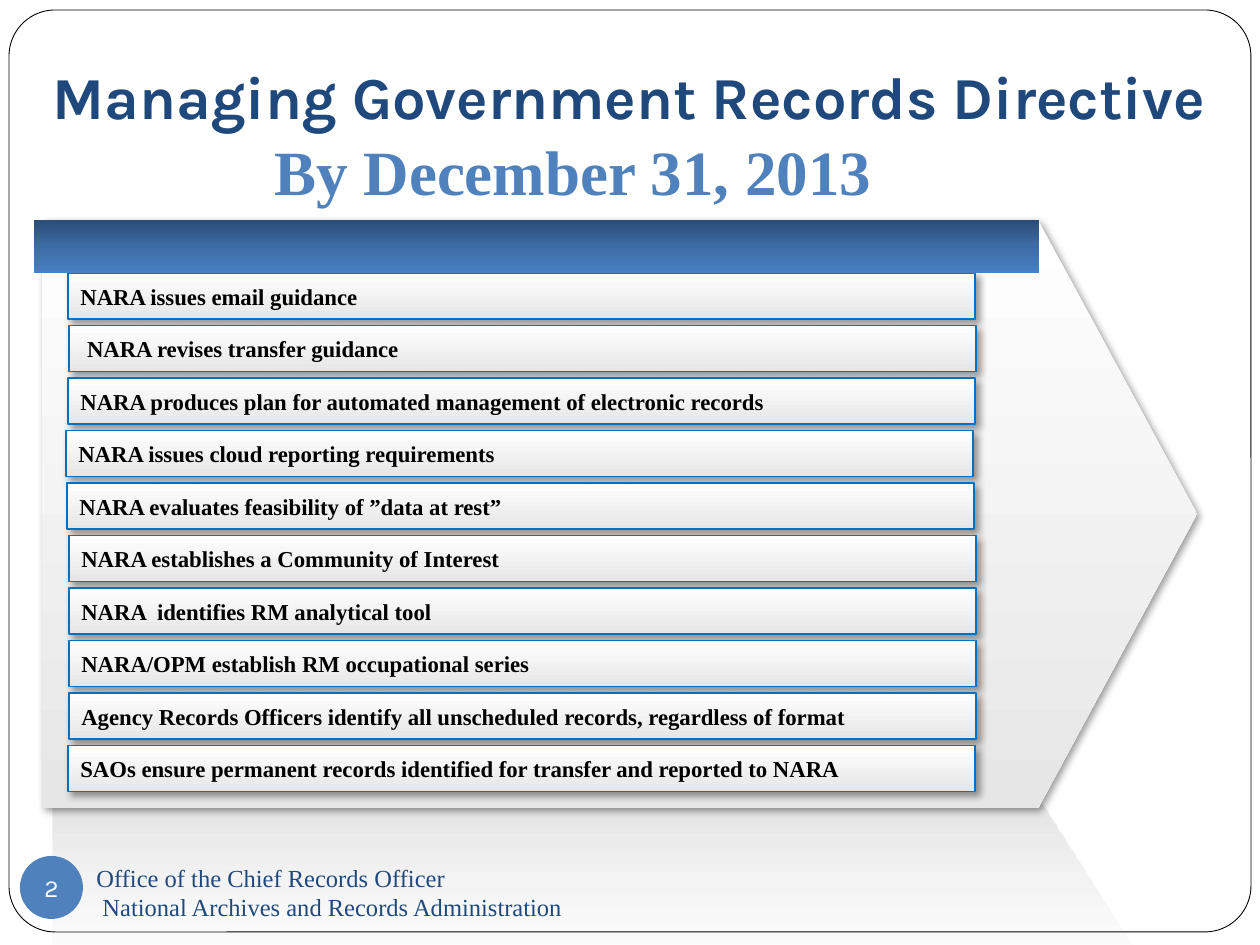
import lxml.etree
import pptx
import pptx.dml.color
import pptx.enum.shapes
import pptx.enum.text
import pptx.oxml
import pptx.oxml.ns
import pptx.util

PX = 914400 / 126
SHAPE = pptx.enum.shapes.MSO_SHAPE
ANCHOR = pptx.enum.text.MSO_ANCHOR
ALIGN = pptx.enum.text.PP_ALIGN
NAVY, BLUE, WHITE, BLACK, EDGE = "navy", "blue", "white", "black", "edge"
COLORS = {k: pptx.dml.color.RGBColor.from_string(v) for k, v in {
    NAVY: "1F497D", BLUE: "4F81BD", WHITE: "FFFFFF", BLACK: "000000", EDGE: "0070C0",
}.items()}
# Gradient stops: position, colour, opacity in percent
SILVER = [(0, "FFFFFF", 100), (100, "E6E6E6", 100)]
REFLECTION = [(0, "020000", 11), (60, "FFFFFF", 0)]
BANNER = [(0, "2A4C75", 100), (50, "3C6CA6", 100), (100, "4780C5", 100)]
SHADOW = """<a:effectLst %s><a:outerShdw blurRad="50800" dist="38100" dir="2700000"
algn="tl" rotWithShape="0"><a:srgbClr val="000000"><a:alpha val="40000"/></a:srgbClr>
</a:outerShdw></a:effectLst>""" % pptx.oxml.ns.nsdecls("a")

prs = pptx.Presentation()
prs.slide_width = pptx.util.Inches(10)
prs.slide_height = pptx.util.Inches(7.5)
slide = prs.slides.add_slide(prs.slide_layouts[5])


def add_block(kind, box, stops=None, shadow=False):
    """Add a preset shape with a vertical gradient and, if asked, a soft shadow."""
    block = slide.shapes.add_shape(kind, *[round(v * PX) for v in box])
    block.line.fill.background()
    block.shadow.inherit = False
    properties = block._element.spPr
    if stops:
        gradient = "".join(
            f'<a:gs pos="{pos * 1000}"><a:srgbClr val="{color}">'
            f'<a:alpha val="{opacity * 1000}"/></a:srgbClr></a:gs>'
            for pos, color, opacity in stops)
        properties.find(pptx.oxml.ns.qn("a:prstGeom")).addnext(pptx.oxml.parse_xml(
            f'<a:gradFill {pptx.oxml.ns.nsdecls("a")} rotWithShape="1"><a:gsLst>{gradient}'
            '</a:gsLst><a:lin ang="5400000" scaled="0"/></a:gradFill>'))
    if shadow:
        properties.replace(properties.find(pptx.oxml.ns.qn("a:effectLst")),
                           pptx.oxml.parse_xml(SHADOW))
    return block


def write(holder, lines, size, color, font="Times New Roman", bold=False,
          align=ALIGN.LEFT, anchor=ANCHOR.MIDDLE):
    """Fill a shape with one paragraph per line, all in one style."""
    frame = holder.text_frame
    frame.text = "\n".join(lines)
    frame.word_wrap = True
    frame.vertical_anchor = anchor
    for paragraph in frame.paragraphs:
        paragraph.alignment = align
        paragraph.font.size = pptx.util.Pt(size)
        paragraph.font.name = font
        paragraph.font.bold = bold
        paragraph.font.color.rgb = COLORS[color]


# Rounded page frame
page_frame = add_block(SHAPE.ROUNDED_RECTANGLE, (9, 10, 1242, 922))
page_frame.adjustments[0] = 0.05
page_frame.fill.solid()
page_frame.fill.fore_color.rgb = COLORS[WHITE]
page_frame.line.color.rgb = COLORS[BLACK]
page_frame.line.width = pptx.util.Pt(0.5)

# Large arrow and its reflection
reflection = add_block(SHAPE.PENTAGON, (53, 798, 1102, 365), REFLECTION)
reflection.adjustments[0] = 0.32
arrow = add_block(SHAPE.PENTAGON, (42, 220, 1155, 588), SILVER, shadow=True)
arrow.adjustments[0] = 0.27

# Title, brought in front of the page frame
title = slide.shapes.title
slide.shapes._spTree.append(title._element)
title.left, title.top, title.width, title.height = [
    round(v * PX) for v in (42, 54, 1174, 83)]
title.text_frame.margin_left = title.text_frame.margin_right = 0
write(title, ["Managing Government Records Directive"], 34, NAVY, "Karla", True, ALIGN.CENTER)

# Deadline
deadline = slide.shapes.add_textbox(*[round(v * PX) for v in (262, 126, 697, 174)])
write(deadline, ["By December 31, 2013"], 36, BLUE, bold=True, anchor=ANCHOR.TOP)

# Milestones: left edge and wording, from top to bottom
milestones = [
    (68, "NARA issues email guidance"),
    (69, " NARA revises transfer guidance"),
    (68, "NARA produces plan for automated management of electronic records"),
    (66, "NARA issues cloud reporting requirements"),
    (67, "NARA evaluates feasibility of ”data at rest”"),
    (69, "NARA establishes a Community of Interest"),
    (69, "NARA  identifies RM analytical tool"),
    (69, "NARA/OPM establish RM occupational series"),
    (69, "Agency Records Officers identify all unscheduled records, regardless of format"),
    (68, "SAOs ensure permanent records identified for transfer and reported to NARA"),
]
for row, (left, wording) in enumerate(milestones):
    milestone = add_block(SHAPE.RECTANGLE, (left, 273 + row * 105 / 2, 907, 46), SILVER, shadow=True)
    milestone.line.color.rgb = COLORS[EDGE]
    milestone.line.width = pptx.util.Pt(0.75)
    write(milestone, [wording], 13, BLACK, bold=True)

# Banner above the milestones
add_block(SHAPE.RECTANGLE, (34, 220, 1005, 53), BANNER)

# Page number
page_number = add_block(SHAPE.OVAL, (20, 856, 63, 63))
page_number.fill.solid()
page_number.fill.fore_color.rgb = COLORS[BLUE]
number_frame = page_number.text_frame
number_frame.margin_left = number_frame.margin_right = 0
number_frame.margin_top = number_frame.margin_bottom = 0
write(page_number, ["2"], 14, WHITE, "Karla", align=ALIGN.CENTER)

# Footer
footer = slide.shapes.add_textbox(*[round(v * PX) for v in (84, 861, 546, 63)])
write(footer, ["Office of the Chief Records Officer",
               " National Archives and Records Administration"], 14, NAVY)

prs.save("out.pptx")
